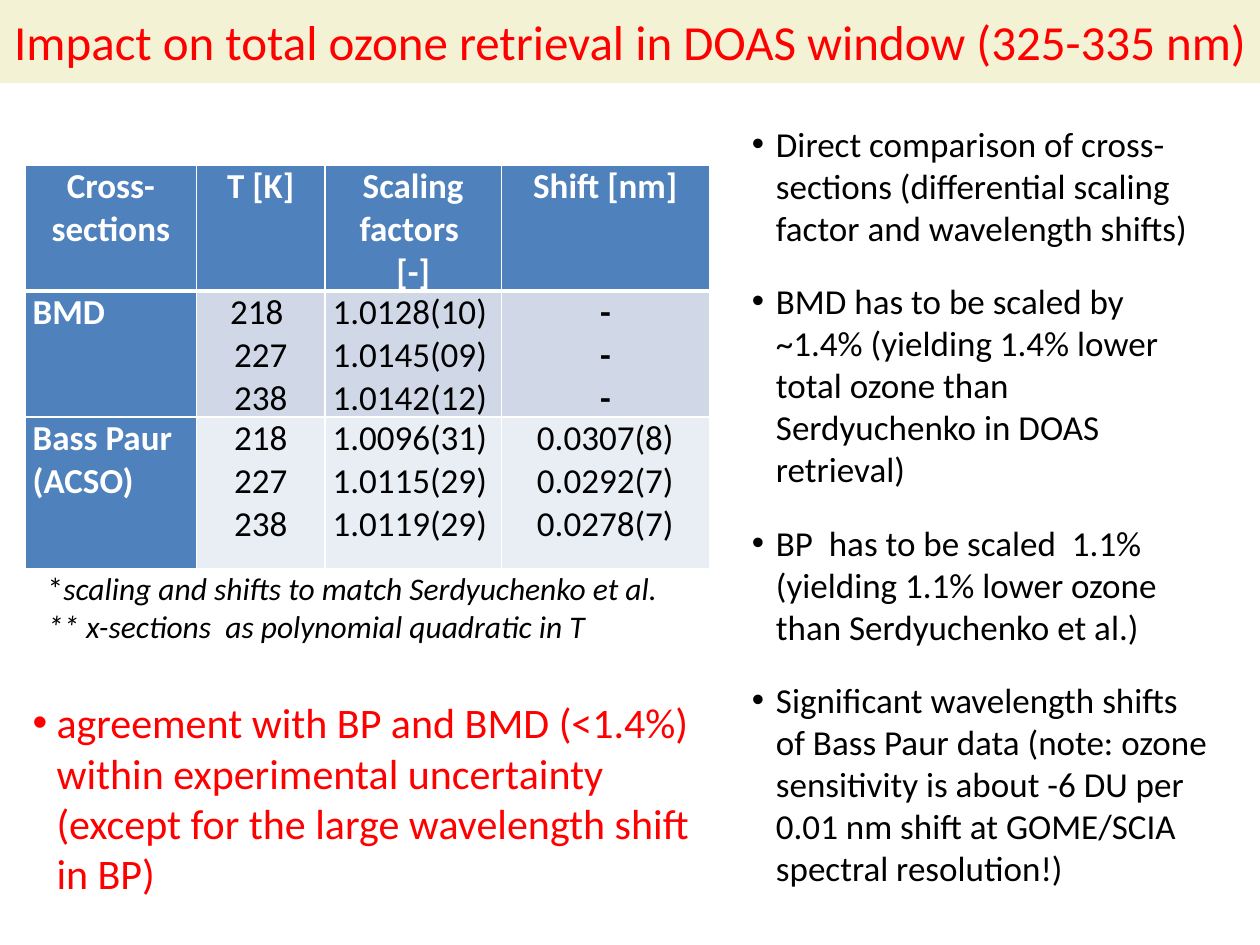
import pptx
import pptx.util
import pptx.dml.color
import pptx.enum.text
import pptx.oxml
import pptx.oxml.ns
from dataclasses import dataclass

Inches, Pt = pptx.util.Inches, pptx.util.Pt
Align = pptx.enum.text.PP_ALIGN
Anchor = pptx.enum.text.MSO_ANCHOR
Fit = pptx.enum.text.MSO_AUTO_SIZE


@dataclass(frozen=True)
class Theme:
    font: str = "Calibri"
    red: str = "FF0000"
    black: str = "000000"
    white: str = "FFFFFF"
    cream: str = "F3F2D5"
    blue: str = "4F81BD"
    bands: tuple = ("D0D8E8", "E9EDF4")
    title: int = 28
    claim: int = 24
    body: int = 20
    note: int = 18


THEME = Theme()

POINTS = [
    "Direct comparison of cross-sections (differential scaling factor and wavelength shifts)",
    "BMD has to be scaled by ~1.4% (yielding 1.4% lower total ozone than Serdyuchenko in DOAS retrieval)",
    "BP  has to be scaled  1.1% (yielding 1.1% lower ozone than Serdyuchenko et al.)",
    "Significant wavelength shifts of Bass Paur data (note: ozone sensitivity is about -6 DU per "
    "0.01 nm shift at GOME/SCIA spectral resolution!)",
]
CLAIM = ("agreement with BP and BMD (<1.4%) within experimental uncertainty "
         "(except for the large wavelength shift in BP)")
HEAD = [["Cross-sections"], ["T [K]"], ["Scaling factors ", "[-]"], ["Shift [nm]"]]
ROWS = [
    [["BMD"], ["218 ", "227", "238"],
     ["1.0128(10)", "1.0145(09)", "1.0142(12)"], ["-"] * 3],
    [["Bass Paur (ACSO)"], ["218", "227", "238"],
     ["1.0096(31)", "1.0115(29)", "1.0119(29)"],
     ["0.0307(8)", "0.0292(7)", "0.0278(7)"]],
]
WIDTHS = [1.36, 1.02, 1.4, 1.65]
HEIGHTS = [1.0, 1.0, 1.2]
ALIGNS = [Align.LEFT, Align.CENTER, Align.JUSTIFY, Align.CENTER]


def color(hue):
    return pptx.dml.color.RGBColor.from_string(hue)


def apply(item, values):
    for name, value in values.items():
        setattr(item, name, value)


def add_run(para, text, size, hue, **style):
    run = para.add_run()
    run.text = text
    apply(run.font, {"name": THEME.font, "size": Pt(size), **style})
    run.font.color.rgb = color(hue)


def fill_text(frame, lines, size, hue, form=None, **style):
    """Write one paragraph per line; return the paragraphs."""
    paras = []
    for i, line in enumerate(lines):
        para = frame.add_paragraph() if i else frame.paragraphs[0]
        apply(para, form or {})
        add_run(para, line, size, hue, **style)
        paras.append(para)
    return paras


def add_bullet(para):
    props = para._p.get_or_add_pPr()
    props.set("marL", str(Inches(0.19)))
    props.set("indent", str(-Inches(0.19)))
    space = pptx.oxml.ns.nsdecls("a")
    for xml in (f'<a:buFont {space} typeface="Arial"/>', f'<a:buChar {space} char="•"/>'):
        props.append(pptx.oxml.parse_xml(xml))


def add_box(slide, area, wrap=True):
    frame = slide.shapes.add_textbox(*map(Inches, area)).text_frame
    frame.word_wrap = wrap
    return frame


def add_list(slide, area, lines, size, hue, form=None):
    for para in fill_text(add_box(slide, area), lines, size, hue, form):
        add_bullet(para)


def set_lines(cell, widths):
    """Draw white cell borders; they come before the fill in the XML."""
    props = cell._tc.get_or_add_tcPr()
    for i, (side, width) in enumerate(zip("LRTB", widths)):
        props.insert(i, pptx.oxml.parse_xml(
            f'<a:ln{side} {pptx.oxml.ns.nsdecls("a")} w="{Pt(width)}"><a:solidFill>'
            f'<a:srgbClr val="{THEME.white}"/></a:solidFill></a:ln{side}>'))


def add_title(slide, text):
    title = slide.shapes.title
    apply(title, {"left": 0, "top": Inches(-0.01),
                  "width": Inches(10), "height": Inches(0.67)})
    title.fill.solid()
    title.fill.fore_color.rgb = color(THEME.cream)
    apply(title.text_frame, {"vertical_anchor": Anchor.MIDDLE, "word_wrap": True,
                             "auto_size": Fit.NONE})
    fill_text(title.text_frame, [text], THEME.title, THEME.red, {"alignment": Align.CENTER})


def add_grid(slide):
    shape = slide.shapes.add_table(3, 4, Inches(0.2), Inches(1.31),
                                   Inches(sum(WIDTHS)), Inches(sum(HEIGHTS)))
    table = shape.table
    table.first_col = True
    for col, width in zip(table.columns, WIDTHS):
        col.width = Inches(width)
    for row, height in zip(table.rows, HEIGHTS):
        row.height = Inches(height)
    for r, row in enumerate([HEAD] + ROWS):
        for c, lines in enumerate(row):
            cell = table.cell(r, c)
            label = r == 0 or c == 0
            apply(cell, {"margin_left": Inches(0.06), "margin_right": Inches(0.06),
                         "margin_top": 0, "margin_bottom": 0})
            cell.fill.solid()
            cell.fill.fore_color.rgb = color(THEME.blue if label else THEME.bands[r - 1])
            set_lines(cell, (1, 1, 3 if r == 1 else 1, 3 if r == 0 else 1))
            fill_text(cell.text_frame, lines, THEME.body,
                      THEME.white if label else THEME.black,
                      {"alignment": Align.CENTER if r == 0 else ALIGNS[c]},
                      bold=label or lines[0] == "-")


def add_notes(slide):
    frame = add_box(slide, (0.28, 4.47, 5.24, 0.71), wrap=False)
    frame.auto_size = Fit.SHAPE_TO_FIT_TEXT
    first = fill_text(frame, ["*"], THEME.note, THEME.black)[0]
    add_run(first, "scaling and shifts to match Serdyuchenko et al.",
            THEME.note, THEME.black, italic=True)
    add_run(frame.add_paragraph(), "** x-sections  as polynomial quadratic in T",
            THEME.note, THEME.black, italic=True)


def main():
    deck = pptx.Presentation()
    apply(deck, {"slide_width": Inches(10), "slide_height": Inches(7.5)})
    slide = deck.slides.add_slide(deck.slide_layouts[5])
    # Title band
    add_title(slide, "Impact on total ozone retrieval in DOAS window (325-335 nm)")
    # Right column
    add_list(slide, (5.87, 0.92, 3.87, 6.02), POINTS, THEME.body, THEME.black,
             {"space_before": Pt(18)})
    # Left column: table, footnotes, conclusion
    add_grid(slide)
    add_notes(slide)
    add_list(slide, (0.16, 5.48, 5.55, 1.73), [CLAIM], THEME.claim, THEME.red)
    deck.save("out.pptx")


if __name__ == "__main__":
    main()
